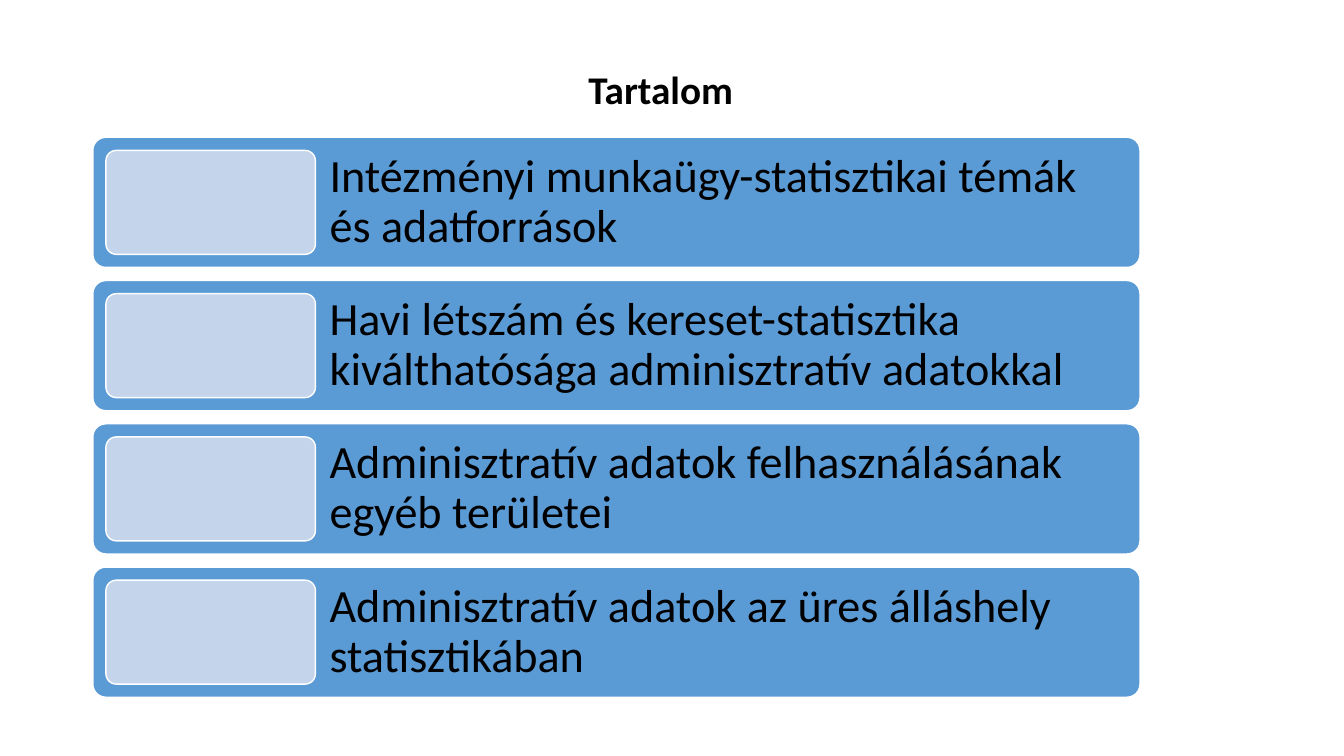
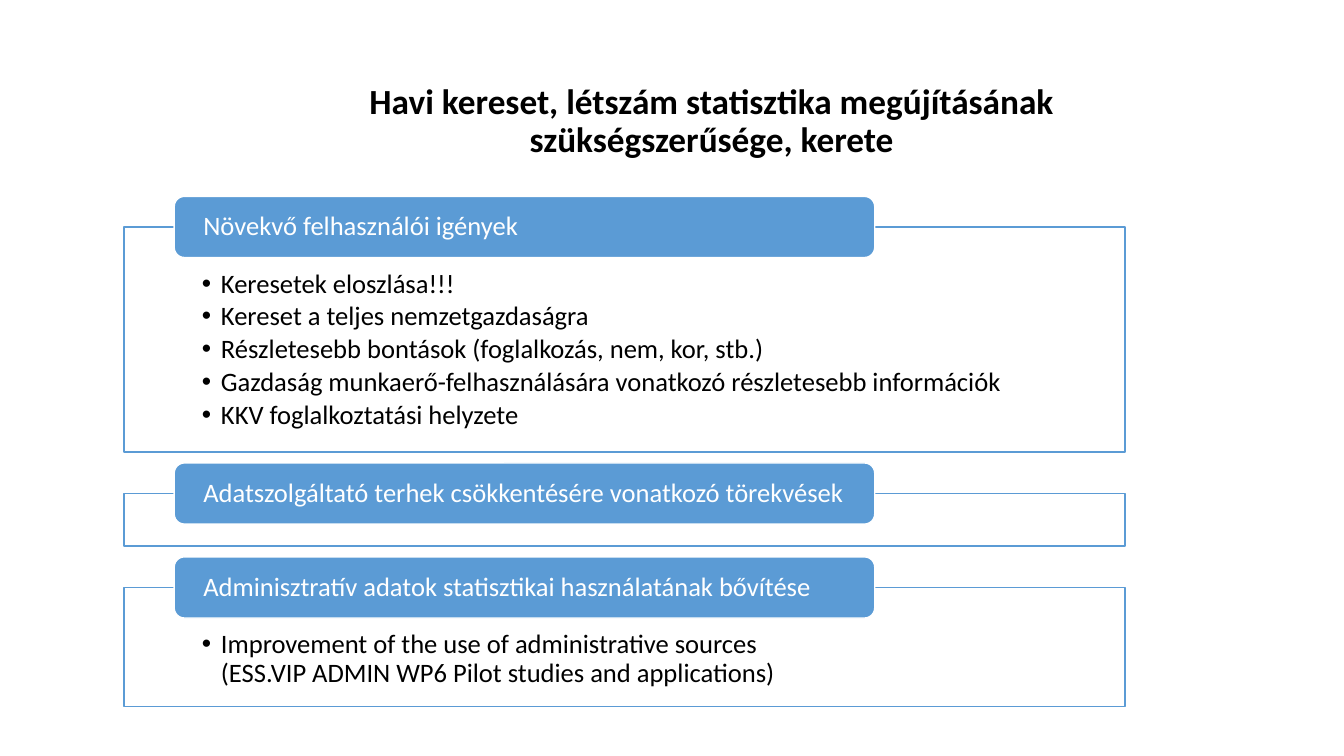
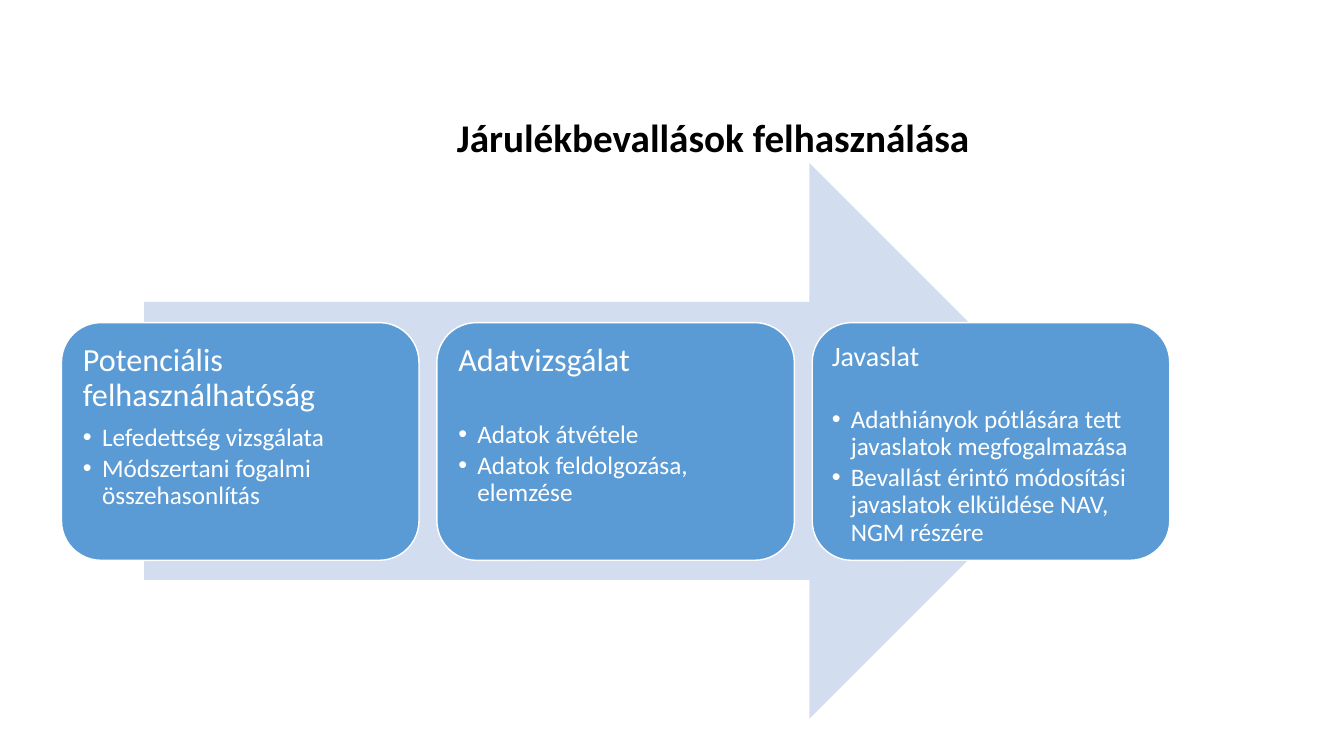
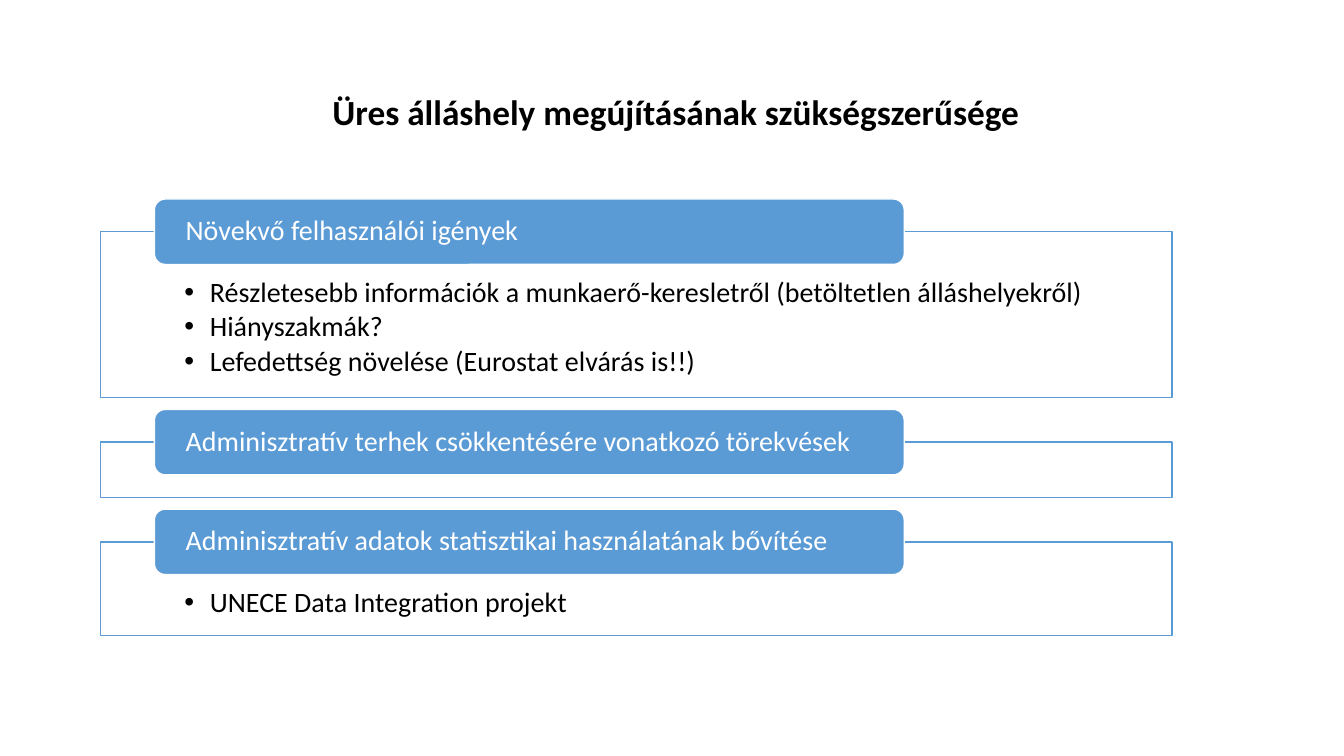
from dataclasses import dataclass

from pptx import Presentation
from pptx.dml.color import RGBColor
from pptx.enum import shapes as sh, text as tx
from pptx.oxml.ns import qn
from pptx.shapes.autoshape import Shape
from pptx.slide import Slide
from pptx.text.text import TextFrame
from pptx.util import Cm, Pt
from lxml import etree

BLUE = RGBColor(0x5B, 0x9B, 0xD5)
PALE = RGBColor(0xC4, 0xD5, 0xEB)
MIST = RGBColor(0xD2, 0xDE, 0xEF)
WHITE = RGBColor(0xFF, 0xFF, 0xFF)
BLACK = RGBColor(0, 0, 0)
FONT = "Calibri"
LEFT, RIGHT, CENTER = tx.PP_ALIGN.LEFT, tx.PP_ALIGN.RIGHT, tx.PP_ALIGN.CENTER
TOP, MIDDLE = tx.MSO_ANCHOR.TOP, tx.MSO_ANCHOR.MIDDLE
RECT = sh.MSO_SHAPE.RECTANGLE
ROUND = sh.MSO_SHAPE.ROUNDED_RECTANGLE
ARROW = sh.MSO_SHAPE.RIGHT_ARROW


@dataclass(frozen=True)
class Box:
    """A frame in centimetres."""
    x: float
    y: float
    w: float
    h: float


@dataclass(frozen=True)
class Para:
    text: str
    size: float
    color: RGBColor = BLACK
    bold: bool = False
    align: tx.PP_ALIGN = LEFT
    after: float = 0
    hang: float = 0


@dataclass(frozen=True)
class Panel:
    head: str
    h: float
    items: tuple[str, ...] = ()


@dataclass(frozen=True)
class Stack:
    """Measures, in centimetres, of a column of panels with tabs."""
    x: float
    y: float
    w: float
    tab: float
    size: float
    pad: tuple[float, float, float, float]
    inset: float
    hang: float


@dataclass(frozen=True)
class Step:
    head: str
    size: float
    after: float
    pad: float
    items: tuple[str, ...]


def assign(item: object, values: dict) -> None:
    for name, value in values.items():
        setattr(item, name, value)


def write(frame: TextFrame, paras: list[Para], anchor: tx.MSO_ANCHOR,
          pad: tuple[float, float, float, float]) -> None:
    """Fill a frame; pad is left, top, right, bottom in centimetres."""
    left, top, right, low = map(Cm, pad)
    assign(frame, {"word_wrap": True, "auto_size": tx.MSO_AUTO_SIZE.NONE,
                   "vertical_anchor": anchor, "margin_left": left,
                   "margin_top": top, "margin_right": right,
                   "margin_bottom": low})
    for i, para in enumerate(paras):
        line = frame.add_paragraph() if i else frame.paragraphs[0]
        if para.hang:
            bullet(line, para.hang)
        assign(line, {"text": para.text, "alignment": para.align,
                      "line_spacing": 0.9, "space_before": Pt(0),
                      "space_after": Pt(para.after)})
        for run in line.runs:
            assign(run.font, {"name": FONT, "size": Pt(para.size),
                              "bold": para.bold})
            run.font.color.rgb = para.color


def bullet(line, hang: float) -> None:
    props = line._p.get_or_add_pPr()
    props.set("marL", str(Cm(hang)))
    props.set("indent", str(-Cm(hang)))
    etree.SubElement(props, qn("a:buFont")).set("typeface", "Arial")
    etree.SubElement(props, qn("a:buChar")).set("char", "•")


def draw(slide: Slide, kind: sh.MSO_SHAPE, box: Box, fill: RGBColor,
         edge: RGBColor | None = WHITE, adj: float | None = None) -> Shape:
    form = slide.shapes.add_shape(
        kind, Cm(box.x), Cm(box.y), Cm(box.w), Cm(box.h))
    form.shadow.inherit = False
    form.fill.solid()
    form.fill.fore_color.rgb = fill
    if edge is None:
        form.line.fill.background()
    else:
        form.line.color.rgb = edge
        form.line.width = Pt(1)
    if adj is not None:
        form.adjustments[0] = adj
    return form


def start(deck, text: str, box: Box, size: float,
          align: tx.PP_ALIGN = CENTER) -> Slide:
    """Add a slide and set its title."""
    slide = deck.slides.add_slide(deck.slide_layouts[5])
    title = slide.shapes.title
    assign(title, {"left": Cm(box.x), "top": Cm(box.y),
                   "width": Cm(box.w), "height": Cm(box.h)})
    write(title.text_frame, [Para(text, size, bold=True, align=align)],
          MIDDLE, (0.25, 0.13, 0.25, 0.13))
    return slide


def agenda(slide: Slide, topics: tuple[str, ...]) -> None:
    high, gap, inset = 3.28, 0.33, 0.33
    for i, topic in enumerate(topics):
        box = Box(2.34, 3.46 + i * (high + gap), 26.39, high)
        bar = draw(slide, ROUND, box, BLUE, adj=0.1)
        write(bar.text_frame, [Para(topic, 33)], MIDDLE,
              (5.87, 0.26, 0.26, 0.26))
        tile = Box(box.x + inset, box.y + inset, 5.28, high - 2 * inset)
        draw(slide, ROUND, tile, PALE, adj=0.1)


def pile(slide: Slide, form: Stack, panels: tuple[Panel, ...]) -> None:
    """Draw panels downwards, each with a tab across its top edge."""
    y = form.y
    for panel in panels:
        body = draw(slide, RECT, Box(form.x, y, form.w, panel.h), WHITE, BLUE)
        if panel.items:
            write(body.text_frame,
                  [Para(item, form.size, after=0.15 * form.size,
                        hang=form.hang) for item in panel.items],
                  TOP, form.pad)
        tab = Box(form.x + 0.05 * form.w, y - form.tab / 2,
                  0.7 * form.w, form.tab)
        head = draw(slide, ROUND, tab, BLUE)
        write(head.text_frame, [Para(panel.head, form.size, WHITE)], MIDDLE,
              (form.inset, 0, form.inset, 0))
        y += panel.h + 0.68 * form.tab


def process(slide: Slide, steps: tuple[Step, ...]) -> None:
    draw(slide, ARROW, Box(3.63, 4.11, 23.77, 14), MIST, None)
    wide, gap = 9.01, 0.45
    for i, step in enumerate(steps):
        box = Box(1.55 + i * (wide + gap), 8.13, wide, 5.99)
        card = draw(slide, ROUND, box, BLUE)
        paras = [Para(step.head, step.size, WHITE, after=step.after)]
        paras += [Para(item, 18, WHITE, after=2.7, hang=0.48)
                  for item in step.items]
        write(card.text_frame, paras, TOP, (step.pad,) * 4)


TOPICS = (
    "Intézményi munkaügy-statisztikai témák és adatforrások",
    "Havi létszám és kereset-statisztika kiválthatósága adminisztratív adatokkal",
    "Adminisztratív adatok felhasználásának egyéb területei",
    "Adminisztratív adatok az üres álláshely statisztikában",
)
NEEDS = "Növekvő felhasználói igények"
USAGE = "Adminisztratív adatok statisztikai használatának bővítése"
WAGES = (
    Panel(NEEDS, 5.67, (
        "Keresetek eloszlása!!!",
        "Kereset a teljes nemzetgazdaságra",
        "Részletesebb bontások (foglalkozás, nem, kor, stb.)",
        "Gazdaság munkaerő-felhasználására vonatkozó részletesebb információk",
        "KKV foglalkoztatási helyzete")),
    Panel("Adatszolgáltató terhek csökkentésére vonatkozó törekvések", 1.32),
    Panel(USAGE, 3, (
        "Improvement of the use of administrative sources\v"
        "(ESS.VIP ADMIN WP6 Pilot studies and applications)",)),
)
STEPS = (
    Step("Potenciális felhasználhatóság", 23, 8, 0.25, (
        "Lefedettség vizsgálata",
        "Módszertani fogalmi összehasonlítás")),
    Step("Adatvizsgálat", 23, 30.5, 0.25, (
        "Adatok átvétele",
        "Adatok feldolgozása, elemzése")),
    Step("Javaslat", 20, 24.5, 0.2, (
        "Adathiányok pótlására tett javaslatok megfogalmazása",
        "Bevallást érintő módosítási javaslatok elküldése NAV, NGM részére")),
)
JOBS = (
    Panel(NEEDS, 4.18, (
        "Részletesebb információk a munkaerő-keresletről (betöltetlen álláshelyekről)",
        "Hiányszakmák?",
        "Lefedettség növelése (Eurostat elvárás is!!)")),
    Panel("Adminisztratív terhek csökkentésére vonatkozó törekvések", 1.39),
    Panel(USAGE, 2.36, ("UNECE Data Integration projekt",)),
)


def main() -> None:
    deck = Presentation()
    deck.slide_width, deck.slide_height = Cm(33.87), Cm(19.05)

    agenda(start(deck, "Tartalom", Box(5.13, 1.14, 23.04, 2.34), 28), TOPICS)

    slide = start(
        deck,
        "Havi kereset, létszám statisztika megújításának szükségszerűsége, kerete",
        Box(7.14, 2.13, 21.59, 1.9), 25.2)
    pile(slide, Stack(3.13, 5.72, 25.22, 1.54, 19,
                      (1.96, 1.09, 1.96, 0.38), 0.66, 0.48), WAGES)

    slide = start(deck, "Járulékbevallások felhasználása",
                  Box(6.45, 2.36, 23.04, 2.34), 28)
    process(slide, STEPS)

    slide = start(deck, "Üres álláshely megújításának szükségszerűsége",
                  Box(7.92, 1.93, 18.03, 1.9), 25.2, RIGHT)
    pile(slide, Stack(2.54, 5.84, 27, 1.65, 20,
                      (2.11, 1.17, 2.11, 0.41), 0.71, 0.64), JOBS)

    deck.save("out.pptx")


if __name__ == "__main__":
    main()
